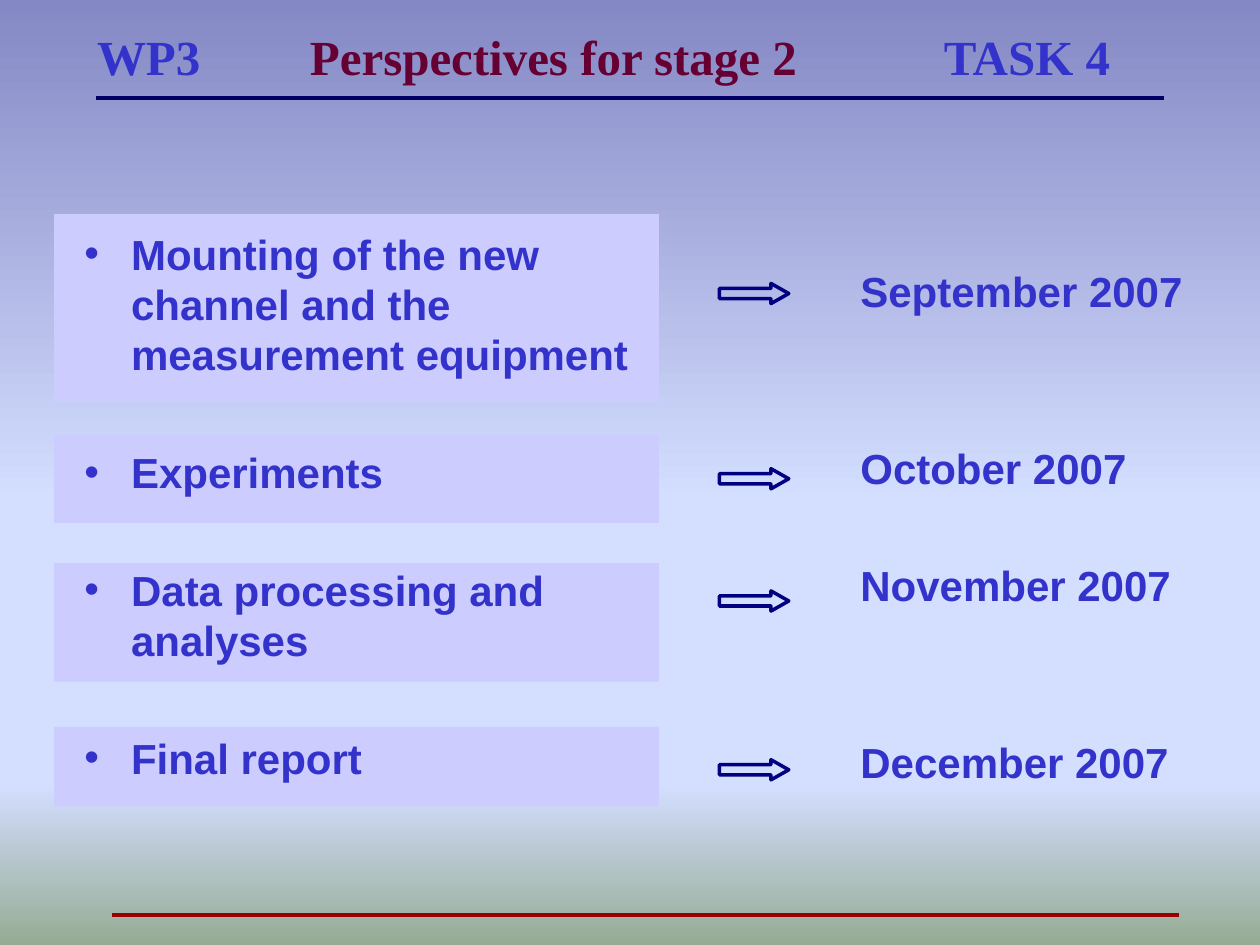
from lxml.etree import SubElement
from pptx import Presentation
from pptx.dml.color import RGBColor
from pptx.enum.shapes import MSO_CONNECTOR, MSO_SHAPE
from pptx.enum.text import MSO_ANCHOR, MSO_AUTO_SIZE, PP_ALIGN
from pptx.oxml.ns import qn
from pptx.util import Inches, Pt

COLOURS = {
    "text": "3333CC",
    "heading": "660033",
    "panel": "CCCCFF",
    "arrow": "000080",
    "top_rule": "000066",
    "bottom_rule": "990000",
}
BACKGROUND_STOPS = [(0, "8488C4"), (53, "D4DEFF"), (83, "D4DEFF"), (100, "96AB94")]
COLUMNS, ROWS = 100, 75
LINE_HEIGHT = 28.8
PARAGRAPH_GAP = 4.8

HEADING = [("WP3", "text"), ("\tPerspectives for stage 2", "heading"), ("\tTASK 4", "text")]
HEADING_TABS = [1.69, 6.72]
STAGES = [
    ("Mounting of the new channel and the measurement equipment", "September 2007"),
    ("Experiments", "October 2007"),
    ("Data processing and analyses", "November 2007"),
    ("Final report", "December 2007"),
]
PANELS = [(17, 14.9), (34.5, 7), (44.7, 9.4), (57.7, 6.3)]
ARROW_ROWS = [22.5, 37.2, 46.9, 60.3]
TASK_SKIPS = [0, 1, 1, 1]
DATE_SKIPS = [0, 2, 1, 2]


class SlideBuilder:
    def __init__(self, presentation):
        self.width = presentation.slide_width
        self.height = presentation.slide_height
        self.slide = presentation.slides.add_slide(presentation.slide_layouts[1])

    def place(self, column, row, columns, rows):
        return (
            int(self.width * column / COLUMNS),
            int(self.height * row / ROWS),
            int(self.width * columns / COLUMNS),
            int(self.height * rows / ROWS),
        )

    def background(self, stops):
        fill = self.slide.background.fill
        fill.gradient()
        fill.gradient_angle = 270
        stop_list = next(self.slide.element.iter(qn("a:gsLst")))
        for stop in list(stop_list):
            stop_list.remove(stop)
        for position, colour in stops:
            stop = SubElement(stop_list, qn("a:gs"), pos=str(position * 1000))
            SubElement(stop, qn("a:srgbClr"), val=colour)

    def rule(self, column, row, columns, colour):
        left, top, width, _ = self.place(column, row, columns, 0)
        line = self.slide.shapes.add_connector(
            MSO_CONNECTOR.STRAIGHT, left, top, left + width, top
        )
        line.line.color.rgb = RGBColor.from_string(COLOURS[colour])
        line.line.width = Pt(2.25)
        SubElement(line.element.spPr, qn("a:effectLst"))

    def panel(self, row, rows):
        shape = self.slide.shapes.add_shape(
            MSO_SHAPE.RECTANGLE, *self.place(4.3, row, 48, rows)
        )
        shape.shadow.inherit = False
        shape.fill.solid()
        shape.fill.fore_color.rgb = RGBColor.from_string(COLOURS["panel"])
        shape.line.fill.background()

    def arrow(self, row):
        shape = self.slide.shapes.add_shape(
            MSO_SHAPE.RIGHT_ARROW, *self.place(57.1, row, 5.5, 1.6)
        )
        shape.shadow.inherit = False
        shape.adjustments[1] = 0.88
        shape.fill.background()
        shape.line.color.rgb = RGBColor.from_string(COLOURS["arrow"])
        shape.line.width = Pt(2)

    def bring_forward(self, shape, area):
        shape.left, shape.top, shape.width, shape.height = self.place(*area)
        shape.element.getparent().append(shape.element)

    def style_run(self, run, font, size, colour):
        run.font.name = font
        run.font.size = Pt(size)
        run.font.bold = True
        run.font.color.rgb = RGBColor.from_string(COLOURS[colour])

    def title(self, parts, tabs, area):
        shape = self.slide.shapes.title
        self.bring_forward(shape, area)
        text_frame = shape.text_frame
        text_frame.auto_size = MSO_AUTO_SIZE.NONE
        text_frame.vertical_anchor = MSO_ANCHOR.MIDDLE
        paragraph = text_frame.paragraphs[0]
        paragraph.alignment = PP_ALIGN.LEFT
        tab_list = SubElement(paragraph._p.get_or_add_pPr(), qn("a:tabLst"))
        for position in tabs:
            SubElement(tab_list, qn("a:tab"), pos=str(Inches(position)), algn="l")
        for text, colour in parts:
            run = paragraph.add_run()
            run.text = text
            self.style_run(run, "Times New Roman", 28, colour)

    def entries(self, text_frame, texts, skips, bulleted):
        text_frame.word_wrap = True
        text_frame.auto_size = MSO_AUTO_SIZE.NONE
        text_frame.text = "\n".join(texts)
        for paragraph, skip in zip(text_frame.paragraphs, skips):
            paragraph.line_spacing = Pt(LINE_HEIGHT)
            paragraph.space_before = Pt(PARAGRAPH_GAP + skip * (LINE_HEIGHT + PARAGRAPH_GAP))
            properties = paragraph._p.get_or_add_pPr()
            properties.set("marL", str(Inches(0.37)))
            properties.set("indent", str(Inches(-0.37)))
            if bulleted:
                SubElement(properties, qn("a:buChar"), char="•")
            self.style_run(paragraph.runs[0], "Arial", 24, "text")

    def body(self, texts, skips, area):
        shape = self.slide.placeholders[1]
        self.bring_forward(shape, area)
        self.entries(shape.text_frame, texts, skips, True)

    def dates(self, texts, skips, area):
        shape = self.slide.shapes.add_textbox(*self.place(*area))
        shape.text_frame.margin_top = Inches(0.52)
        self.entries(shape.text_frame, texts, skips, False)


def main():
    presentation = Presentation()
    presentation.slide_width = Inches(10)
    presentation.slide_height = Inches(7.5)
    builder = SlideBuilder(presentation)
    tasks, dates = zip(*STAGES)

    builder.background(BACKGROUND_STOPS)
    builder.rule(7.6, 7.8, 84.8, "top_rule")
    builder.rule(8.9, 72.6, 84.7, "bottom_rule")
    for row, rows in PANELS:
        builder.panel(row, rows)
    builder.title(HEADING, HEADING_TABS, (6.7, 2.1, 85.9, 4.7))
    builder.body(tasks, TASK_SKIPS, (5.7, 17.6, 50.6, 46.5))
    builder.dates(dates, DATE_SKIPS, (67.3, 15.9, 28.5, 46.5))
    for row in ARROW_ROWS:
        builder.arrow(row)
    presentation.save("out.pptx")


if __name__ == "__main__":
    main()
